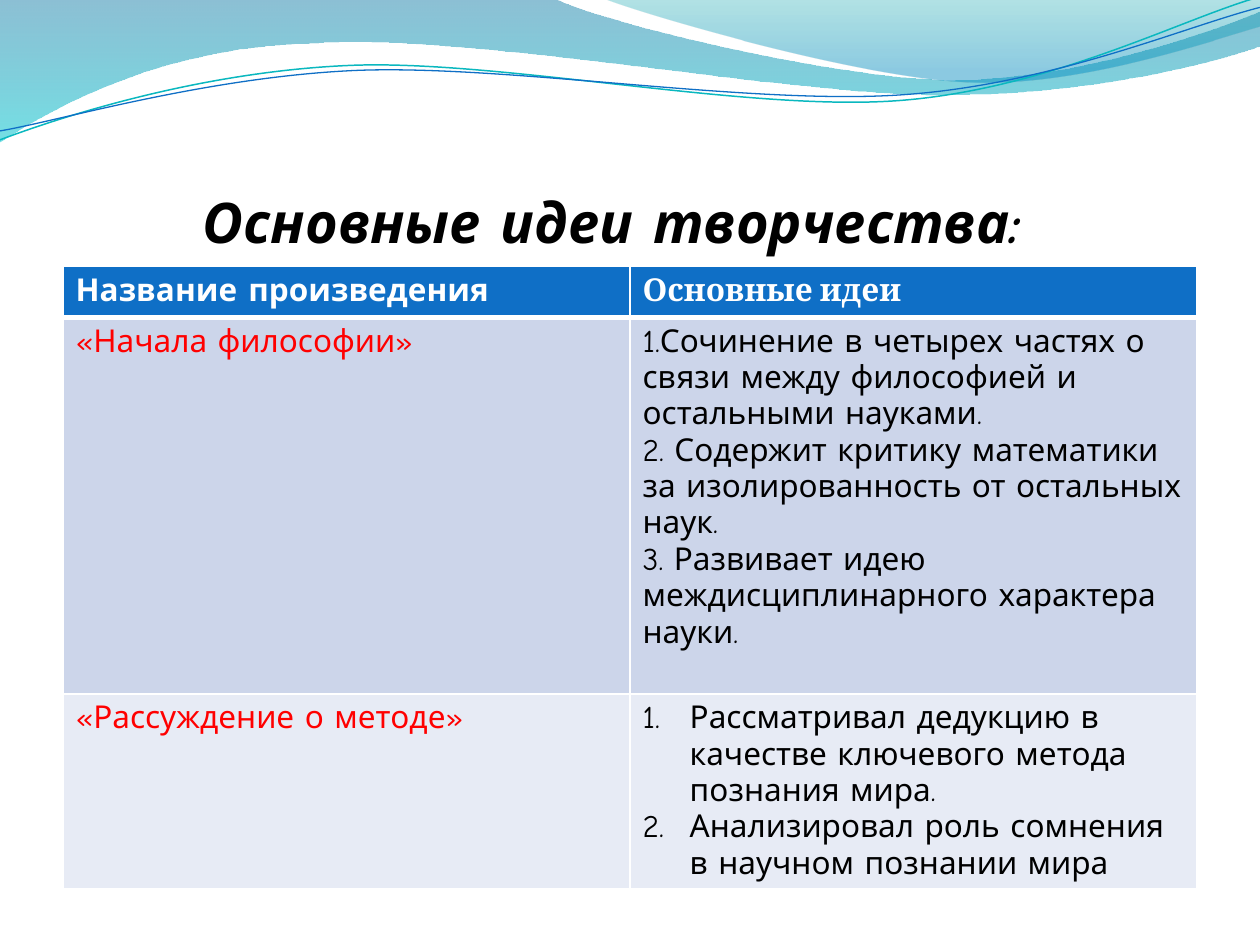
from dataclasses import dataclass

from lxml import etree
from pptx import Presentation
from pptx.dml.color import RGBColor
from pptx.enum.text import MSO_ANCHOR, MSO_AUTO_SIZE, PP_ALIGN
from pptx.oxml.ns import qn
from pptx.util import Cm, Pt

LEFT = PP_ALIGN.LEFT
BOTTOM = MSO_ANCHOR.BOTTOM
NO_AUTOSIZE = MSO_AUTO_SIZE.NONE
TITLE_ONLY = 5


@dataclass(frozen=True)
class Theme:
    font: str = "Comic Neue"
    header_font: str = "Cambria"
    title_size: int = 32
    table_size: int = 18
    black: str = "000000"
    white: str = "FFFFFF"
    red: str = "FF0000"
    blue: str = "0F6FC6"
    teal: str = "0AB8BF"
    band_dark: str = "CCD5EA"
    band_light: str = "E7EBF5"
    # Gradient stops: position, colour, opacity in percent
    left_wave: tuple = ((0, "0074A1", 45), (1, "00C6CF", 55))
    right_wave: tuple = ((0, "00A1A9", 30), (0.8, "008BBF", 45))


# Outlines in centimetres: a start, then lines (2 numbers) or curves (6 numbers)
LEFT_WAVE = [
    (0, 0), (11.18, -0.03),
    (12.09, 0.43, 16.87, 1.6, 19.25, 1.6),
    (21.67, 1.6, 24.33, 0.66, 25.4, 0.23),
    (25.43, 0.91),
    (24.97, 1.12, 22.1, 1.93, 18.95, 1.91),
    (15.8, 1.91, 9.7, 0.71, 6.53, 0.86),
    (3.28, 0.91, 1.17, 2.11, -0.03, 2.87),
]
RIGHT_WAVE = [
    (12.17, -0.03),
    (12.93, 0.28, 17.32, 1.57, 19.53, 1.65),
    (21.74, 1.75, 24.41, 0.81, 25.4, 0.53),
    (25.4, 0),
]
TEAL_LINE = [
    (0, 2.82),
    (1.22, 2.36, 4.01, 1.45, 7.04, 1.32),
    (10.03, 1.19, 15.06, 2.26, 18.11, 2.03),
    (21.16, 1.8, 23.83, 0.38, 25.35, -0.05),
]
BLUE_LINE = [
    (0, 2.64),
    (1.19, 2.44, 4.17, 1.55, 7.19, 1.42),
    (10.24, 1.3, 15.16, 2.13, 18.21, 1.91),
    (21.23, 1.7, 23.9, 0.53, 25.4, 0.15),
]


class SlideBuilder:
    def __init__(self, slide, theme):
        self.slide = slide
        self.theme = theme

    def format_paragraph(self, paragraph, size, color, font=None, bold=False, italic=False):
        paragraph.alignment = LEFT
        for run in paragraph.runs:
            run.font.name = font or self.theme.font
            run.font.size = Pt(size)
            run.font.bold = bold
            run.font.italic = italic
            run.font.color.rgb = RGBColor.from_string(color)

    def outline(self, steps, closed):
        points = [(Cm(step[i]), Cm(step[i + 1]))
                  for step in steps for i in range(0, len(step), 2)]
        builder = self.slide.shapes.build_freeform(*points[0])
        builder.add_line_segments(points[1:], close=closed)
        shape = builder.convert_to_shape()
        shape.shadow.inherit = False
        # Join each run of three segments that stands for a cubic curve
        segments = iter(shape.element.findall(".//" + qn("a:lnTo")))
        for step in steps[1:]:
            first = next(segments)
            if len(step) == 6:
                first.tag = qn("a:cubicBezTo")
                for segment in (next(segments), next(segments)):
                    first.append(segment[0])
                    segment.getparent().remove(segment)
        return shape

    def wave(self, steps, stops):
        shape = self.outline(steps, closed=True)
        shape.line.fill.background()
        shape.fill.gradient()
        shape.fill.gradient_angle = 270
        for stop, (position, color, opacity) in zip(shape.fill.gradient_stops, stops):
            stop.position = position
            stop.color.rgb = RGBColor.from_string(color)
        colors = shape.element.spPr.findall(".//" + qn("a:srgbClr"))
        for element, (position, color, opacity) in zip(colors, stops):
            etree.SubElement(element, qn("a:alpha"), val=str(opacity * 1000))

    def curve(self, steps, color, width):
        shape = self.outline(steps, closed=False)
        shape.fill.background()
        shape.line.color.rgb = RGBColor.from_string(color)
        shape.line.width = Pt(width)

    def title(self, text, left, top, width, height, indent):
        title = self.slide.shapes.title
        title.left, title.top, title.width, title.height = map(Cm, (left, top, width, height))
        frame = title.text_frame
        frame.text = text
        frame.word_wrap = True
        frame.auto_size = NO_AUTOSIZE
        frame.vertical_anchor = BOTTOM
        frame.margin_left, frame.margin_right, frame.margin_bottom = Cm(indent), 0, 0
        self.format_paragraph(frame.paragraphs[0], self.theme.title_size,
                              self.theme.black, bold=True, italic=True)

    def borders(self, cell, widths):
        properties = cell._tc.get_or_add_tcPr()
        for side, width in zip("LRTB", widths):
            line = etree.SubElement(properties, qn(f"a:ln{side}"), w=str(Pt(width)))
            fill = etree.SubElement(line, qn("a:solidFill"))
            etree.SubElement(fill, qn("a:srgbClr"), val=self.theme.white)

    def number(self, paragraph, indent):
        properties = paragraph._p.get_or_add_pPr()
        properties.set("marL", str(Cm(indent)))
        properties.set("indent", str(-Cm(indent)))
        etree.SubElement(properties, qn("a:buFont"), typeface="+mj-lt")
        etree.SubElement(properties, qn("a:buAutoNum"), type="arabicPeriod")

    def cell(self, cell, text, fill, borders, numbered=False, **style):
        cell.text_frame.text = text
        for paragraph in cell.text_frame.paragraphs:
            self.format_paragraph(paragraph, self.theme.table_size, **style)
            if numbered:
                self.number(paragraph, 0.95)
        self.borders(cell, borders)
        cell.fill.solid()
        cell.fill.fore_color.rgb = RGBColor.from_string(fill)

    def table(self, header, rows, left, top, width, heights):
        theme = self.theme
        table = self.slide.shapes.add_table(
            len(heights), len(header), Cm(left), Cm(top), Cm(width), Cm(sum(heights))).table
        for row, height in zip(table.rows, heights):
            row.height = Cm(height)
        for column, (text, font) in enumerate(header):
            self.cell(table.cell(0, column), text, theme.blue, (1, 1, 1, 3),
                      color=theme.white, font=font, bold=True)
        for index, (work, ideas, numbered) in enumerate(rows, start=1):
            fill = theme.band_dark if index % 2 else theme.band_light
            borders = (1, 1, 3 if index == 1 else 1, 1)
            self.cell(table.cell(index, 0), work, fill, borders, color=theme.red)
            self.cell(table.cell(index, 1), "\n".join(ideas), fill, borders, numbered,
                      color=theme.black)


def main():
    theme = Theme()
    presentation = Presentation()
    presentation.slide_width, presentation.slide_height = Cm(25.4), Cm(19.05)
    slide = presentation.slides.add_slide(presentation.slide_layouts[TITLE_ONLY])
    builder = SlideBuilder(slide, theme)

    # Wave decoration
    builder.wave(LEFT_WAVE, theme.left_wave)
    builder.wave(RIGHT_WAVE, theme.right_wave)
    builder.curve(TEAL_LINE, theme.teal, 0.85)
    builder.curve(BLUE_LINE, theme.blue, 0.75)

    # Title
    builder.title("Основные идеи творчества:", 1.27, 1.96, 22.86, 3.18, indent=2.82)

    # Works and their ideas
    header = [("Название произведения", theme.font), ("Основные идеи", theme.header_font)]
    rows = [
        ("«Начала философии»", [
            "1.Сочинение в четырех частях о связи между философией и остальными науками.",
            "2. Содержит критику математики за изолированность от остальных наук.",
            "3. Развивает идею междисциплинарного характера науки.",
        ], False),
        ("«Рассуждение о методе»", [
            "Рассматривал дедукцию в качестве ключевого метода познания мира.",
            "Анализировал роль сомнения в научном познании мира",
        ], True),
    ]
    builder.table(header, rows, 1.27, 5.37, 22.86, (1.03, 7.59, 3.91))

    presentation.save("out.pptx")


if __name__ == "__main__":
    main()
